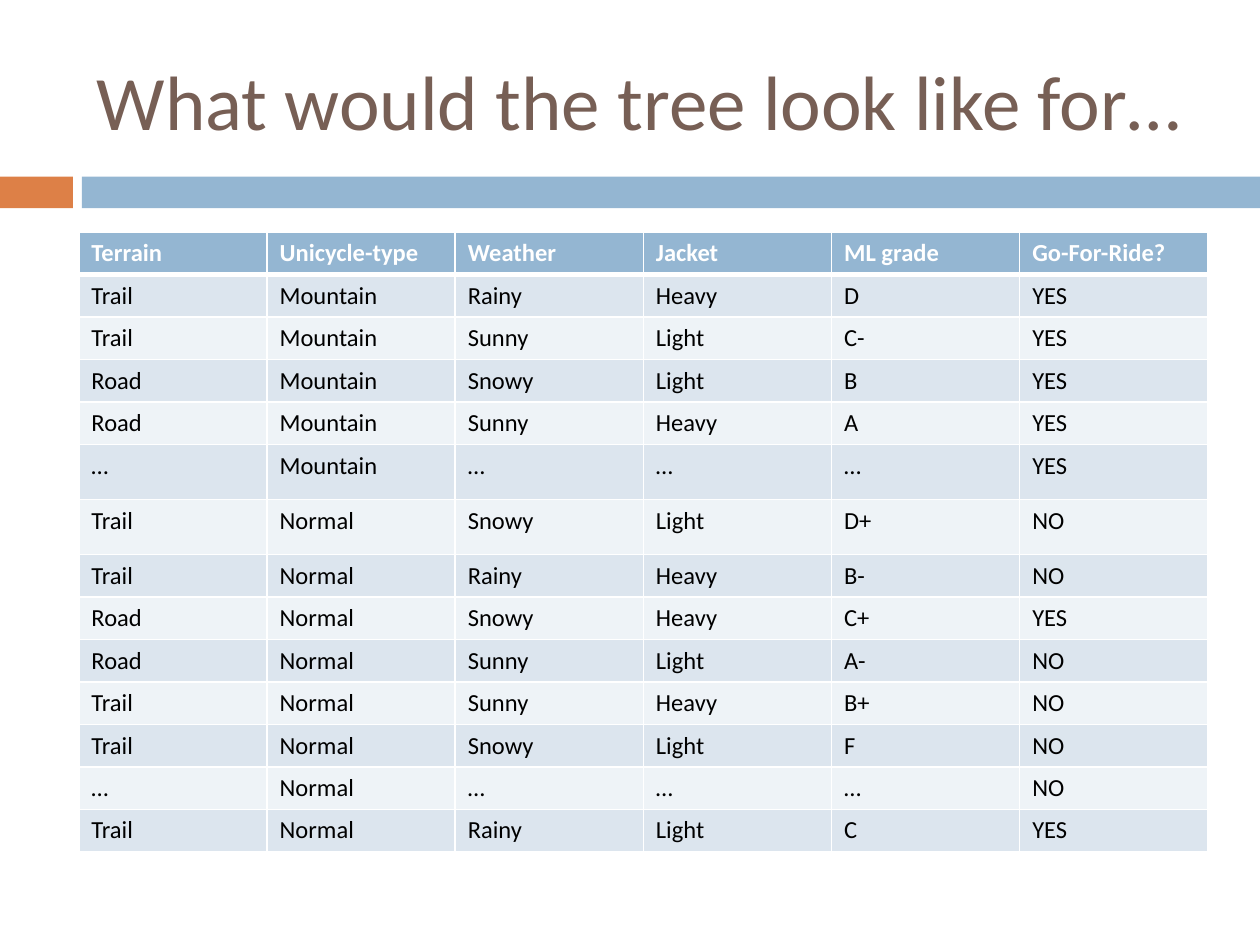
from dataclasses import dataclass

import pptx
import pptx.dml.color
import pptx.enum.shapes
import pptx.enum.text
import pptx.oxml
import pptx.oxml.ns
import pptx.util

Cm = pptx.util.Cm
Pt = pptx.util.Pt


@dataclass(frozen=True)
class Theme:
    """Colours, font and type sizes of the slide."""
    font: str = "Calibri"
    title: str = "775F55"
    accent: str = "DD8047"
    main: str = "94B6D2"
    bands: tuple = ("DCE5EE", "EEF3F7")
    text: str = "000000"
    white: str = "FFFFFF"
    big: int = 44
    small: int = 14


THEME = Theme()

HEAD = ("Terrain", "Unicycle-type", "Weather", "Jacket", "ML grade", "Go-For-Ride?")
RIDES = (
    ("Trail", "Mountain", "Rainy", "Heavy", "D", "YES"),
    ("Trail", "Mountain", "Sunny", "Light", "C-", "YES"),
    ("Road", "Mountain", "Snowy", "Light", "B", "YES"),
    ("Road", "Mountain", "Sunny", "Heavy", "A", "YES"),
    ("…", "Mountain", "…", "…", "…", "YES"),
    ("Trail", "Normal", "Snowy", "Light", "D+", "NO"),
    ("Trail", "Normal", "Rainy", "Heavy", "B-", "NO"),
    ("Road", "Normal", "Snowy", "Heavy", "C+", "YES"),
    ("Road", "Normal", "Sunny", "Light", "A-", "NO"),
    ("Trail", "Normal", "Sunny", "Heavy", "B+", "NO"),
    ("Trail", "Normal", "Snowy", "Light", "F", "NO"),
    ("…", "Normal", "…", "…", "…", "NO"),
    ("Trail", "Normal", "Rainy", "Light", "C", "YES"),
)
TALL = (5, 6)


def rgb(code):
    """Turn a hex code into a colour."""
    return pptx.dml.color.RGBColor.from_string(code)


def style(frame, size, color, bold=False):
    """Format every run of a text frame."""
    for para in frame.paragraphs:
        for run in para.runs:
            run.font.name = THEME.font
            run.font.size = Pt(size)
            run.font.bold = bold
            run.font.color.rgb = rgb(color)


def add_title(slide, text, left, top, width, height):
    """Place the title, centred vertically in its box."""
    box = slide.shapes.add_textbox(Cm(left), Cm(top), Cm(width), Cm(height))
    frame = box.text_frame
    frame.word_wrap = True
    frame.vertical_anchor = pptx.enum.text.MSO_ANCHOR.MIDDLE
    frame.text = text
    style(frame, THEME.big, THEME.title)


def add_band(slide, left, top, width, height, tab=1.47, gap=0.18):
    """Draw the accent tab and the long bar beside it."""
    start = tab + gap
    parts = ((0, tab, THEME.accent), (start, width - start, THEME.main))
    for shift, span, color in parts:
        bar = slide.shapes.add_shape(
            pptx.enum.shapes.MSO_SHAPE.RECTANGLE,
            Cm(left + shift), Cm(top), Cm(span), Cm(height))
        bar.shadow.inherit = False
        bar.fill.solid()
        bar.fill.fore_color.rgb = rgb(color)
        bar.line.fill.background()


def add_edges(cell, top, bottom):
    """Give a cell white borders, with its own top and bottom widths."""
    props = cell._tc.get_or_add_tcPr()
    for side, width in (("L", 1), ("R", 1), ("T", top), ("B", bottom)):
        props.append(pptx.oxml.parse_xml(
            f'<a:ln{side} {pptx.oxml.ns.nsdecls("a")} w="{Pt(width)}">'
            f'<a:solidFill><a:srgbClr val="{THEME.white}"/></a:solidFill>'
            f'</a:ln{side}>'))


def add_grid(slide, left, top, width, height):
    """Place the table of rides, with a header and banded rows."""
    rows = (HEAD, *RIDES)
    table = slide.shapes.add_table(
        len(rows), len(HEAD), Cm(left), Cm(top), Cm(width), Cm(height)).table
    tall = 1.11
    short = (height - tall * len(TALL)) / (len(rows) - len(TALL))
    for col in table.columns:
        col.width = Cm(width / len(HEAD))
    for i, row in enumerate(rows):
        table.rows[i].height = Cm(tall if i in TALL else short)
        head = i == 0
        fill = THEME.main if head else THEME.bands[(i - 1) % 2]
        for j, text in enumerate(row):
            cell = table.cell(i, j)
            cell.text_frame.text = text
            style(cell.text_frame, THEME.small,
                  THEME.white if head else THEME.text, head)
            add_edges(cell, 3 if i == 1 else 1, 3 if head else 1)
            cell.fill.solid()
            cell.fill.fore_color.rgb = rgb(fill)


def main():
    """Build the slide and save it."""
    deck = pptx.Presentation()
    deck.slide_width, deck.slide_height = Cm(25.4), Cm(19.05)
    slide = deck.slides.add_slide(deck.slide_layouts[6])
    add_band(slide, 0, 3.56, 25.4, 0.64)
    add_title(slide, "What would the tree look like for…", 1.7, 0.64, 22.66, 2.74)
    add_grid(slide, 1.59, 4.68, 22.76, 12.5)
    deck.save("out.pptx")


if __name__ == "__main__":
    main()
